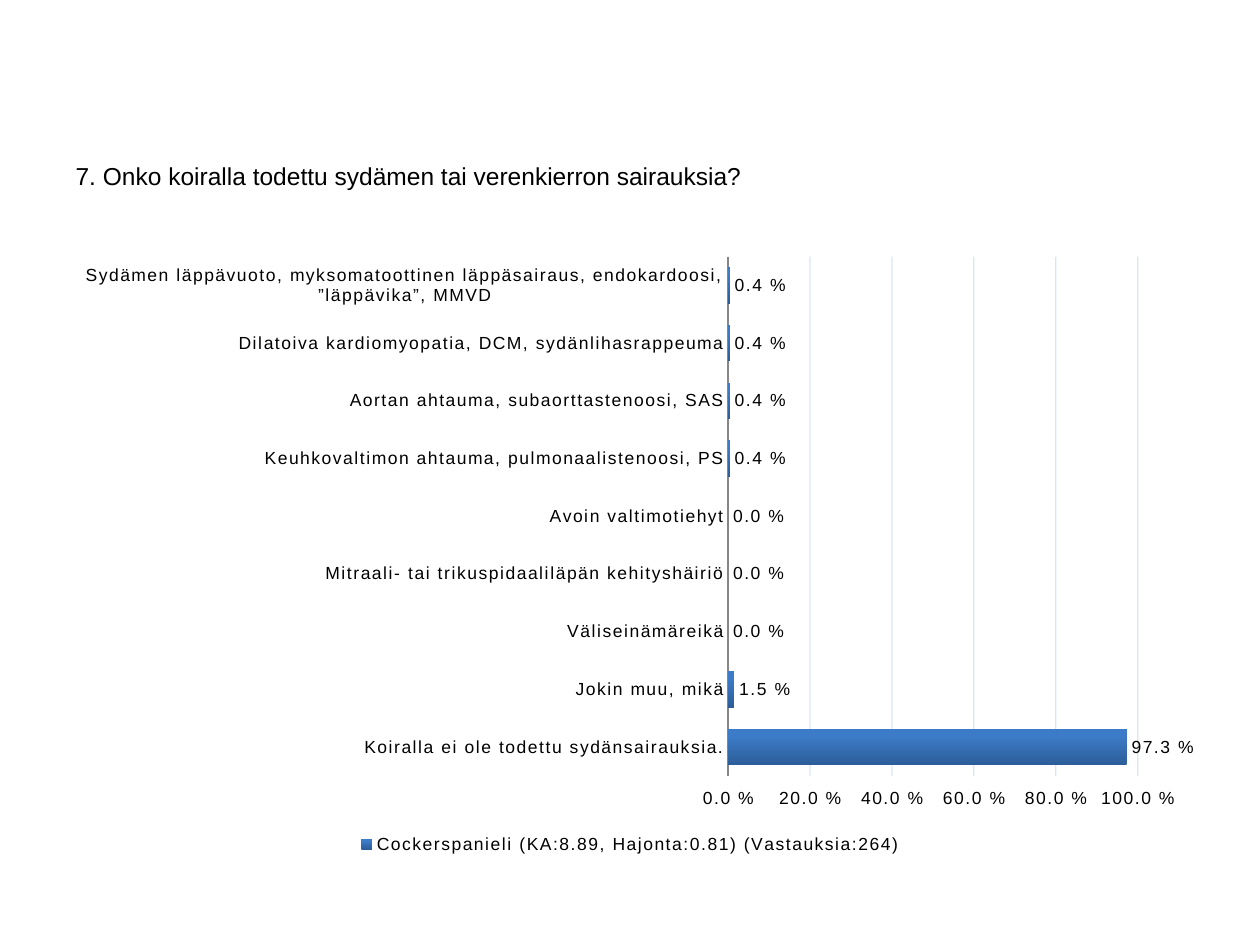
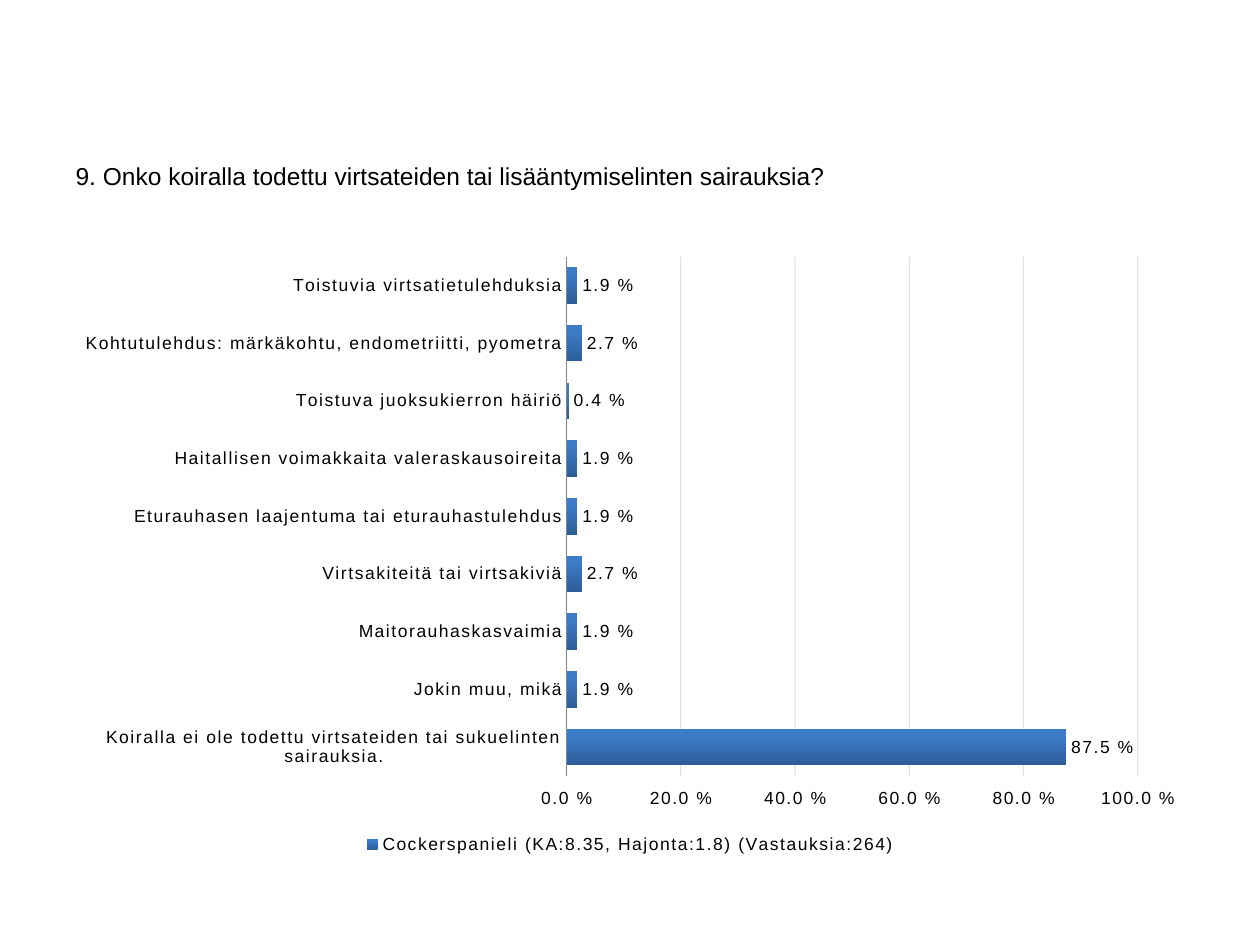
"""Build two survey slides, each with a question and a bar chart of the answers."""
import pptx
import pptx.chart.data
import pptx.dml.color
import pptx.enum.chart
import pptx.enum.text
import pptx.util
from lxml import etree

Inches, Pt = pptx.util.Inches, pptx.util.Pt
enum = pptx.enum.chart

SLIDES = [
    {
        "ask": "7. Onko koiralla todettu sydämen tai verenkierron sairauksia?",
        "group": "Cockerspanieli (KA:8.89, Hajonta:0.81) (Vastauksia:264)",
        "rows": [
            ("Sydämen läppävuoto, myksomatoottinen läppäsairaus, endokardoosi, ”läppävika”, MMVD", 0.004),
            ("Dilatoiva kardiomyopatia, DCM, sydänlihasrappeuma", 0.004),
            ("Aortan ahtauma, subaorttastenoosi, SAS", 0.004),
            ("Keuhkovaltimon ahtauma, pulmonaalistenoosi, PS", 0.004),
            ("Avoin valtimotiehyt", 0),
            ("Mitraali- tai trikuspidaaliläpän kehityshäiriö", 0),
            ("Väliseinämäreikä", 0),
            ("Jokin muu, mikä", 0.015),
            ("Koiralla ei ole todettu sydänsairauksia.", 0.973),
        ],
    },
    {
        "ask": "9. Onko koiralla todettu virtsateiden tai lisääntymiselinten sairauksia?",
        "group": "Cockerspanieli (KA:8.35, Hajonta:1.8) (Vastauksia:264)",
        "rows": [
            ("Toistuvia virtsatietulehduksia", 0.019),
            ("Kohtutulehdus: märkäkohtu, endometriitti, pyometra", 0.027),
            ("Toistuva juoksukierron häiriö", 0.004),
            ("Haitallisen voimakkaita valeraskausoireita", 0.019),
            ("Eturauhasen laajentuma tai eturauhastulehdus", 0.019),
            ("Virtsakiteitä tai virtsakiviä", 0.027),
            ("Maitorauhaskasvaimia", 0.019),
            ("Jokin muu, mikä", 0.019),
            ("Koiralla ei ole todettu virtsateiden tai sukuelinten sairauksia.", 0.875),
        ],
    },
]

THEME = {
    "font": "Arial", "ask": 14, "label": 10, "track": "100",
    "ink": "000000", "axis": "868686", "grid": "4F81BD", "fade": "20000",
    "dark": "2C5D98", "light": "3C7BC7", "percent": "0.0\\ %",
}
LEFT, WIDTH = 0.5, 9
ASK = [Inches(n) for n in (LEFT, 1.23, WIDTH, 0.59)]
CHART = [Inches(n) for n in (LEFT, 1.94, WIDTH, 4.88)]


def hue(name):
    return pptx.dml.color.RGBColor.from_string(THEME[name])


def style(font, size):
    font.name, font.size, font.bold = THEME["font"], Pt(THEME[size]), False
    font.color.rgb = hue("ink")


def add_ask(slide, text):
    title = slide.shapes.title.element
    title.getparent().remove(title)
    box = slide.placeholders[1]
    box.left, box.top, box.width, box.height = ASK
    box.text_frame.text = text
    box.text_frame.vertical_anchor = pptx.enum.text.MSO_ANCHOR.TOP
    style(box.text_frame.paragraphs[0].font, "ask")


def paint_bars(series):
    series.invert_if_negative = False
    fill = series.format.fill
    fill.gradient()
    fill.gradient_angle = 90
    for stop, name, place in zip(fill.gradient_stops, ("dark", "light"), (0, 0.8)):
        stop.color.rgb, stop.position = hue(name), place


def set_axes(chart):
    cat, val = chart.category_axis, chart.value_axis
    for axis in (cat, val):
        axis.major_tick_mark = axis.minor_tick_mark = enum.XL_TICK_MARK.NONE
    cat.reverse_order = True
    cat.format.line.color.rgb = hue("axis")
    cat.format.line.width = Pt(0.75)
    val.minimum_scale, val.maximum_scale, val.major_unit = 0, 1, 0.2
    val.tick_label_position = enum.XL_TICK_LABEL_POSITION.HIGH
    val.format.line.fill.background()
    val.tick_labels.number_format = THEME["percent"]
    val.tick_labels.number_format_is_linked = False
    grid = val.major_gridlines.format.line
    grid.color.rgb, grid.width = hue("grid"), Pt(0.75)
    for color in chart.element.xpath(".//c:majorGridlines//a:srgbClr"):
        tag = etree.QName(color.tag)
        etree.SubElement(color, f"{{{tag.namespace}}}alpha", val=THEME["fade"])


def add_bars(slide, group, rows):
    data = pptx.chart.data.CategoryChartData(number_format=THEME["percent"])
    data.categories = [name for name, share in rows]
    data.add_series(group, [share for name, share in rows])
    chart = slide.shapes.add_chart(enum.XL_CHART_TYPE.BAR_CLUSTERED, *CHART, data).chart
    chart.has_title = False
    chart.has_legend = True
    chart.legend.position = enum.XL_LEGEND_POSITION.BOTTOM
    chart.legend.include_in_layout = False
    plot = chart.plots[0]
    plot.gap_width, plot.vary_by_categories = 58, False
    plot.has_data_labels = True
    labels = plot.data_labels
    labels.show_value = True
    labels.number_format, labels.number_format_is_linked = THEME["percent"], False
    labels.position = enum.XL_LABEL_POSITION.OUTSIDE_END
    paint_bars(plot.series[0])
    set_axes(chart)
    ticks = [axis.tick_labels for axis in (chart.category_axis, chart.value_axis)]
    for part in (chart, chart.legend, labels, *ticks):
        style(part.font, "label")
    for props in chart.element.xpath(".//a:defRPr"):
        props.set("spc", THEME["track"])


def main():
    deck = pptx.Presentation()
    deck.slide_width, deck.slide_height = Inches(10), Inches(7.5)
    for item in SLIDES:
        slide = deck.slides.add_slide(deck.slide_layouts[2])
        add_ask(slide, item["ask"])
        add_bars(slide, item["group"], item["rows"])
    deck.save("out.pptx")


if __name__ == "__main__":
    main()
